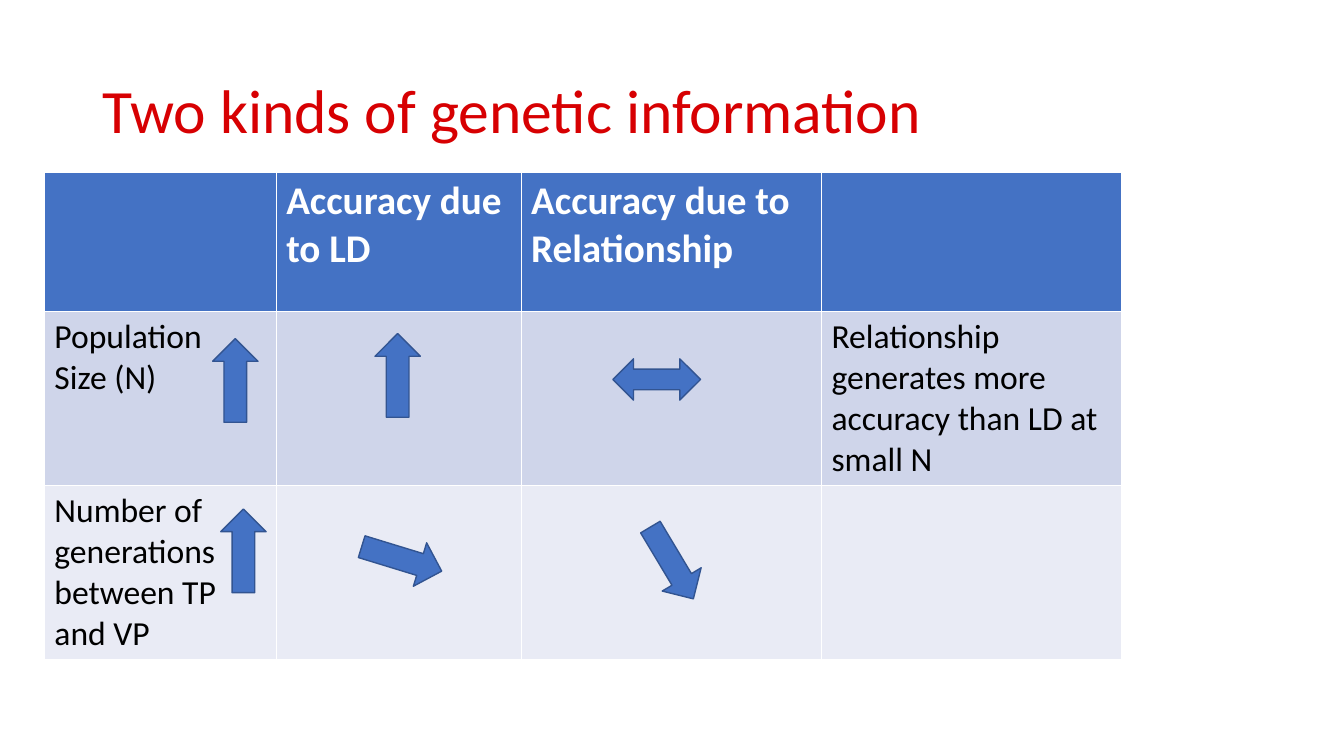
"""Build the slide on two kinds of genetic information."""
from pptx import Presentation
from pptx.dml.color import RGBColor
from pptx.enum.shapes import MSO_SHAPE
from pptx.enum.text import MSO_ANCHOR, PP_ALIGN
from pptx.util import Pt

PX = 9144
WHITE = RGBColor(0xFF, 0xFF, 0xFF)
BLACK = RGBColor(0, 0, 0)
RED = RGBColor(0xD7, 0x00, 0x02)
BLUE = RGBColor(0x44, 0x72, 0xC4)
EDGE = RGBColor(0x32, 0x54, 0x91)
FILLS = [BLUE, RGBColor(0xCF, 0xD5, 0xEA), RGBColor(0xE9, 0xEB, 0xF5)]

TITLE = "Two kinds of genetic information"
ROWS = [
    ["", "Accuracy due to LD", "Accuracy due to Relationship", ""],
    ["Population\nSize (N)", "", "",
     "Relationship generates more accuracy than LD at small N"],
    ["Number of generations between TP\nand VP", "", "", ""],
]
WIDTHS = [230, 243, 298, 298]
HEIGHT = 138
UP, BOTH = MSO_SHAPE.UP_ARROW, MSO_SHAPE.LEFT_RIGHT_ARROW
SIZES = {UP: (45, 83), BOTH: (87, 41)}
ARROWS = [
    (UP, 211, 336, 0),
    (UP, 372, 331, 0),
    (BOTH, 608, 356, 0),
    (UP, 219, 505, 0),
    (UP, 376, 513, 107),
    (UP, 644, 517, 149.1),
]
HEAD = {"name": "Calibri", "size": Pt(28), "bold": True}
BODY = {"name": "Calibri", "size": Pt(24), "bold": False}
TOP = {"name": "Calibri", "size": Pt(44), "bold": False}


def box(*vals):
    return [round(val * PX) for val in vals]


def style(part, form, color):
    for key, val in form.items():
        setattr(part.font, key, val)
    part.font.color.rgb = color


def add_title(slide):
    title = slide.shapes.title
    spots = box(92, 40, 1150, 145)
    for key, val in zip(("left", "top", "width", "height"), spots):
        setattr(title, key, val)
    title.text_frame.text = TITLE
    title.text_frame.vertical_anchor = MSO_ANCHOR.MIDDLE
    line = title.text_frame.paragraphs[0]
    line.alignment = PP_ALIGN.LEFT
    line.line_spacing = 0.9
    style(line, TOP, RED)


def add_grid(slide):
    spots = box(44, 171, sum(WIDTHS), HEIGHT * len(ROWS))
    grid = slide.shapes.add_table(len(ROWS), len(WIDTHS), *spots).table
    for col, width in zip(grid.columns, WIDTHS):
        col.width = width * PX
    for r, row in enumerate(ROWS):
        form, color = (BODY, BLACK) if r else (HEAD, WHITE)
        for c, text in enumerate(row):
            cell = grid.cell(r, c)
            cell.fill.solid()
            cell.fill.fore_color.rgb = FILLS[r]
            cell.text = text
            for line in cell.text_frame.paragraphs:
                style(line, form, color)


def add_arrows(slide):
    for kind, left, top, turn in ARROWS:
        arrow = slide.shapes.add_shape(kind, *box(left, top, *SIZES[kind]))
        arrow.rotation = turn
        arrow.shadow.inherit = False
        arrow.fill.solid()
        arrow.fill.fore_color.rgb = BLUE
        arrow.line.color.rgb = EDGE
        arrow.line.width = Pt(1)


def main():
    deck = Presentation()
    deck.slide_width, deck.slide_height = box(1333.33, 750)
    slide = deck.slides.add_slide(deck.slide_layouts[5])
    add_title(slide)
    add_grid(slide)
    add_arrows(slide)
    deck.save("out.pptx")


if __name__ == "__main__":
    main()
